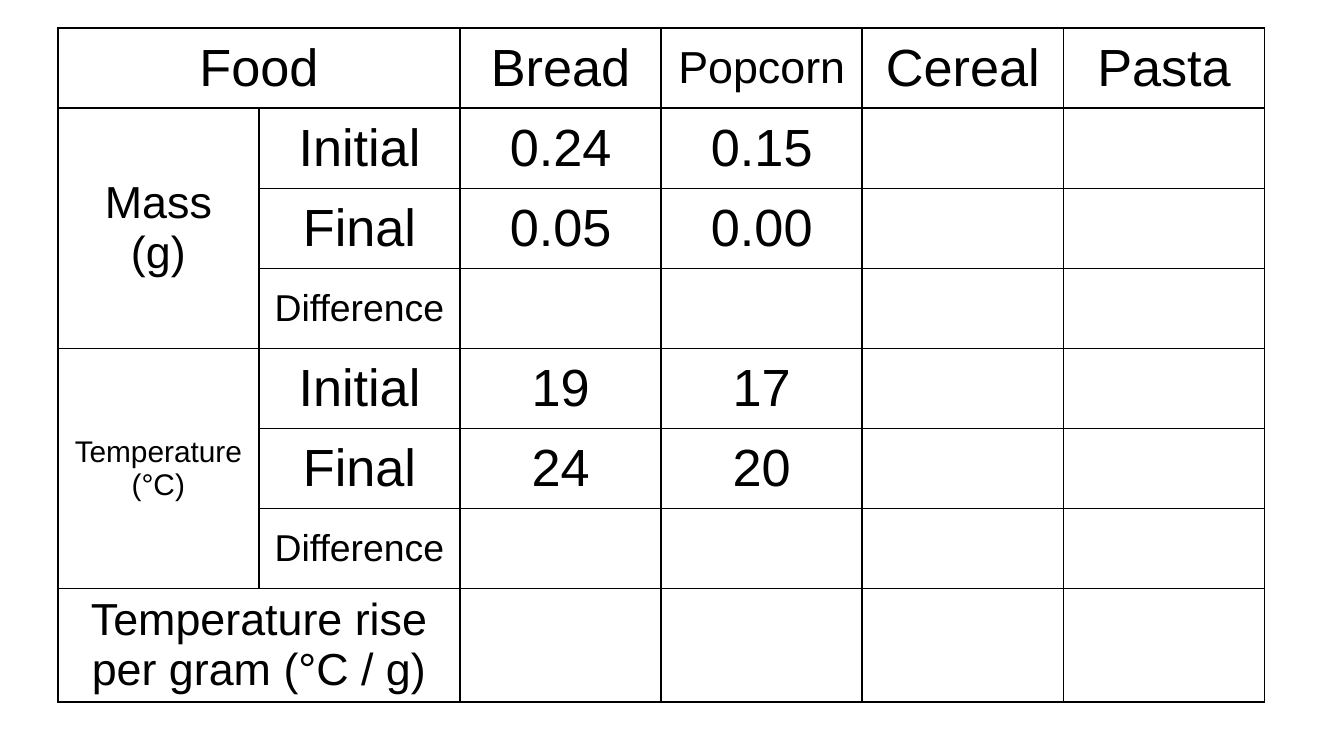
from lxml.etree import SubElement
from pptx import Presentation
from pptx.dml.color import RGBColor
from pptx.enum.text import MSO_ANCHOR, PP_ALIGN
from pptx.oxml.ns import qn
from pptx.util import Inches, Pt

BLACK = RGBColor(0x00, 0x00, 0x00)
WHITE = RGBColor(0xFF, 0xFF, 0xFF)

RESULTS = [
    ["Food", "", "Bread", "Popcorn", "Cereal", "Pasta"],
    ["Mass (g)", "Initial", "0.24", "0.15", "", ""],
    ["", "Final", "0.05", "0.00", "", ""],
    ["", "Difference", "", "", "", ""],
    ["Temperature (°C)", "Initial", "19", "17", "", ""],
    ["", "Final", "24", "20", "", ""],
    ["", "Difference", "", "", "", ""],
    ["Temperature rise per gram (°C / g)", "", "", "", "", ""],
]
MERGES = [((0, 0), (0, 1)), ((1, 0), (3, 0)), ((4, 0), (6, 0)), ((7, 0), (7, 1))]
NORMAL_SIZE = 28
SMALLER_SIZES = {
    "Popcorn": 24,
    "Mass (g)": 24,
    "Difference": 20,
    "Temperature (°C)": 16,
    "Temperature rise per gram (°C / g)": 24,
}
LAST_ROW_HEIGHT = Inches(0.84)


def add_borders(cell):
    properties = cell._tc.get_or_add_tcPr()
    for side in ("a:lnL", "a:lnR", "a:lnT", "a:lnB"):
        line = SubElement(properties, qn(side), w=str(Pt(1)))
        fill = SubElement(line, qn("a:solidFill"))
        SubElement(fill, qn("a:srgbClr"), val=str(BLACK))


def format_cell(cell, text):
    add_borders(cell)
    cell.fill.solid()
    cell.fill.fore_color.rgb = WHITE
    cell.vertical_anchor = MSO_ANCHOR.MIDDLE
    cell.margin_left = cell.margin_right = Inches(0.11)
    cell.text = text
    paragraph = cell.text_frame.paragraphs[0]
    paragraph.alignment = PP_ALIGN.CENTER
    paragraph.font.name = "Arial"
    paragraph.font.size = Pt(SMALLER_SIZES.get(text, NORMAL_SIZE))
    paragraph.font.color.rgb = BLACK


def add_results_table(slide, left, top, width, height):
    row_count, column_count = len(RESULTS), len(RESULTS[0])
    table = slide.shapes.add_table(
        row_count, column_count, left, top, width, height
    ).table
    table.first_row = False
    table.horz_banding = False

    for column in table.columns:
        column.width = width // column_count
    for row in table.rows:
        row.height = (height - LAST_ROW_HEIGHT) // (row_count - 1)
    table.rows[row_count - 1].height = LAST_ROW_HEIGHT

    for row_index, texts in enumerate(RESULTS):
        for column_index, text in enumerate(texts):
            format_cell(table.cell(row_index, column_index), text)
    for first, last in MERGES:
        table.cell(*first).merge(table.cell(*last))


def main():
    presentation = Presentation()
    presentation.slide_width = Inches(10)
    presentation.slide_height = presentation.slide_width * 9 // 16
    slide = presentation.slides.add_slide(presentation.slide_layouts[6])
    add_results_table(slide, Inches(0.43), Inches(0.21), Inches(8.98), Inches(5.01))
    presentation.save("out.pptx")


if __name__ == "__main__":
    main()
